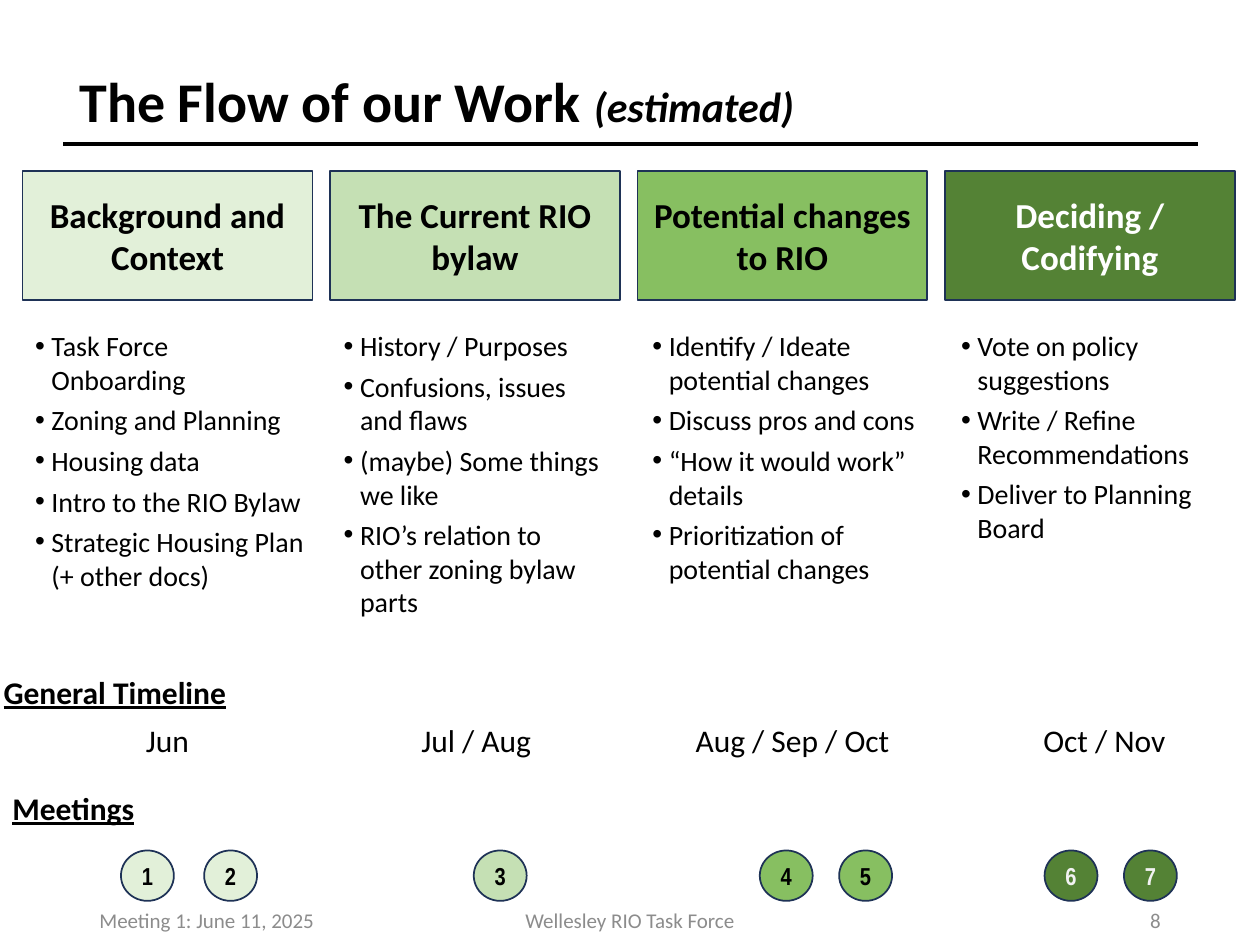
from lxml.etree import SubElement
from pptx import Presentation
from pptx.dml.color import RGBColor
from pptx.enum.shapes import MSO_CONNECTOR, MSO_SHAPE
from pptx.enum.text import MSO_ANCHOR, MSO_AUTO_SIZE, PP_ALIGN
from pptx.oxml.ns import qn
from pptx.util import Inches, Pt

TITLE = ("The Flow of our Work ", "(estimated)")
PHASES = [
    dict(name="Background and Context", fill="E2F0D9", color="000000", disc_color="000000",
         tasks=["Task Force Onboarding", "Zoning and Planning", "Housing data",
                "Intro to the RIO Bylaw", "Strategic Housing Plan (+ other docs)"],
         list_size=(2.33, 2.21), months="Jun", months_at=(0.18, 2.3),
         meetings={1: 0.96, 2: 1.62}),
    dict(name="The Current RIO bylaw", fill="C5E0B4", color="000000", disc_color="000000",
         tasks=["History / Purposes", "Confusions, issues and flaws",
                "(maybe) Some things we like",
                "RIO’s relation to other zoning bylaw parts"],
         list_size=(2.3, 2.42), months="Jul / Aug", months_at=(2.63, 2.3),
         meetings={3: 3.76}),
    dict(name="Potential changes to RIO", fill="87BF61", color="000000", disc_color="000000",
         tasks=["Identify / Ideate potential changes", "Discuss pros and cons",
                "“How it would work” details", "Prioritization of potential changes"],
         list_size=(2.29, 2.15), months="Aug / Sep / Oct", months_at=(5.19, 2.2),
         meetings={4: 6.03, 5: 6.66}),
    dict(name="Deciding / Codifying", fill="548235", color="FFFFFF", disc_color="F2F2F2",
         tasks=["Vote on policy suggestions", "Write / Refine Recommendations",
                "Deliver to Planning Board"],
         list_size=(2.26, 1.83), months="Oct / Nov", months_at=(7.72, 2.09),
         meetings={6: 8.29, 7: 8.92}),
]
HEADINGS = [("General Timeline", -0.07, 5.29, 1.98), ("Meetings", 0, 6.21, 1.18)]
FOOTERS = [
    ("Meeting 1: June 11, 2025", 0.69, 2.25, PP_ALIGN.LEFT),
    ("Wellesley RIO Task Force", 3.31, 3.38, PP_ALIGN.CENTER),
    ("8", 7.06, 2.25, PP_ALIGN.RIGHT),
]
LEFT, BOX_PITCH, LIST_PITCH = 0.18, 2.44, 2.45
OUTLINE = "1E3256"


def rgb(value):
    return RGBColor.from_string(value)


def add_run(p, text, size=18, color="000000", font="Calibri",
            bold=False, italic=False, underline=False):
    r = p.add_run()
    r.text = text
    f = r.font
    f.size, f.name, f.color.rgb = Pt(size), font, rgb(color)
    f.bold, f.italic, f.underline = bold, italic, underline


def add_bullet(p):
    pPr = p._p.get_or_add_pPr()
    pPr.set("marL", str(Inches(0.13)))
    pPr.set("indent", str(-Inches(0.13)))
    SubElement(pPr, qn("a:buFont"), typeface="Arial")
    SubElement(pPr, qn("a:buChar"), char="•")


def write(tf, lines, align=PP_ALIGN.LEFT, anchor=MSO_ANCHOR.TOP, wrap=True,
          bullets=False, **fmt):
    """Fill a text frame with one paragraph per line."""
    tf.word_wrap, tf.vertical_anchor = wrap, anchor
    for i, line in enumerate(lines):
        p = tf.add_paragraph() if i else tf.paragraphs[0]
        p.alignment = align
        if bullets:
            p.space_before = Pt(4)
            add_bullet(p)
        add_run(p, line, **fmt)


def add_text(s, box, lines, **fmt):
    sp = s.shapes.add_textbox(*map(Inches, box))
    write(sp.text_frame, lines, **fmt)


def add_filled(s, kind, box, fill, text, inset=None, **fmt):
    sp = s.shapes.add_shape(kind, *map(Inches, box))
    sp.shadow.inherit = False
    sp.fill.solid()
    sp.fill.fore_color.rgb = rgb(fill)
    sp.line.color.rgb, sp.line.width = rgb(OUTLINE), Pt(1)
    tf = sp.text_frame
    if inset is not None:
        tf.margin_left = tf.margin_right = tf.margin_top = tf.margin_bottom = Inches(inset)
    write(tf, [text], align=PP_ALIGN.CENTER, anchor=MSO_ANCHOR.MIDDLE, bold=True, **fmt)


def add_title(s):
    sp = s.shapes.title
    sp.left, sp.top, sp.width, sp.height = map(Inches, (0.53, 0.2, 8.98, 0.92))
    tf = sp.text_frame
    tf.auto_size = MSO_AUTO_SIZE.NONE
    write(tf, TITLE[:1], anchor=MSO_ANCHOR.BOTTOM, size=32, bold=True)
    p = tf.paragraphs[0]
    p.line_spacing = 0.9
    add_run(p, TITLE[1], size=24, bold=True, italic=True)

    rule = s.shapes.add_connector(MSO_CONNECTOR.STRAIGHT, *map(Inches, (0.5, 1.14, 9.51, 1.14)))
    rule.line.color.rgb, rule.line.width = rgb("000000"), Pt(2.25)
    SubElement(rule._element.spPr, qn("a:effectLst"))


def add_phase(s, i, phase):
    add_filled(s, MSO_SHAPE.RECTANGLE, (LEFT + i * BOX_PITCH, 1.36, 2.3, 1.02),
               phase["fill"], phase["name"], size=20, color=phase["color"])
    add_text(s, (LEFT + i * LIST_PITCH, 2.56, *phase["list_size"]), phase["tasks"],
             bullets=True, size=16)
    x, width = phase["months_at"]
    add_text(s, (x, 5.67, width, 0.4), [phase["months"]], align=PP_ALIGN.CENTER)
    for number, x in phase["meetings"].items():
        add_filled(s, MSO_SHAPE.OVAL, (x, 6.75, 0.42, 0.4), phase["fill"], str(number),
                   inset=0.05, size=14, font="Arial Narrow", color=phase["disc_color"])


def main():
    prs = Presentation()
    prs.slide_width, prs.slide_height = Inches(10), Inches(7.5)
    s = prs.slides.add_slide(prs.slide_layouts[5])
    add_title(s)
    for i, phase in enumerate(PHASES):
        add_phase(s, i, phase)
    for text, x, y, width in HEADINGS:
        add_text(s, (x, y, width, 0.4), [text], wrap=False, bold=True, underline=True)
    for text, x, width, align in FOOTERS:
        add_text(s, (x, 7.1, width, 0.4), [text], align=align,
                 anchor=MSO_ANCHOR.MIDDLE, size=12, color="8C8C8C")
    prs.save("out.pptx")


if __name__ == "__main__":
    main()
